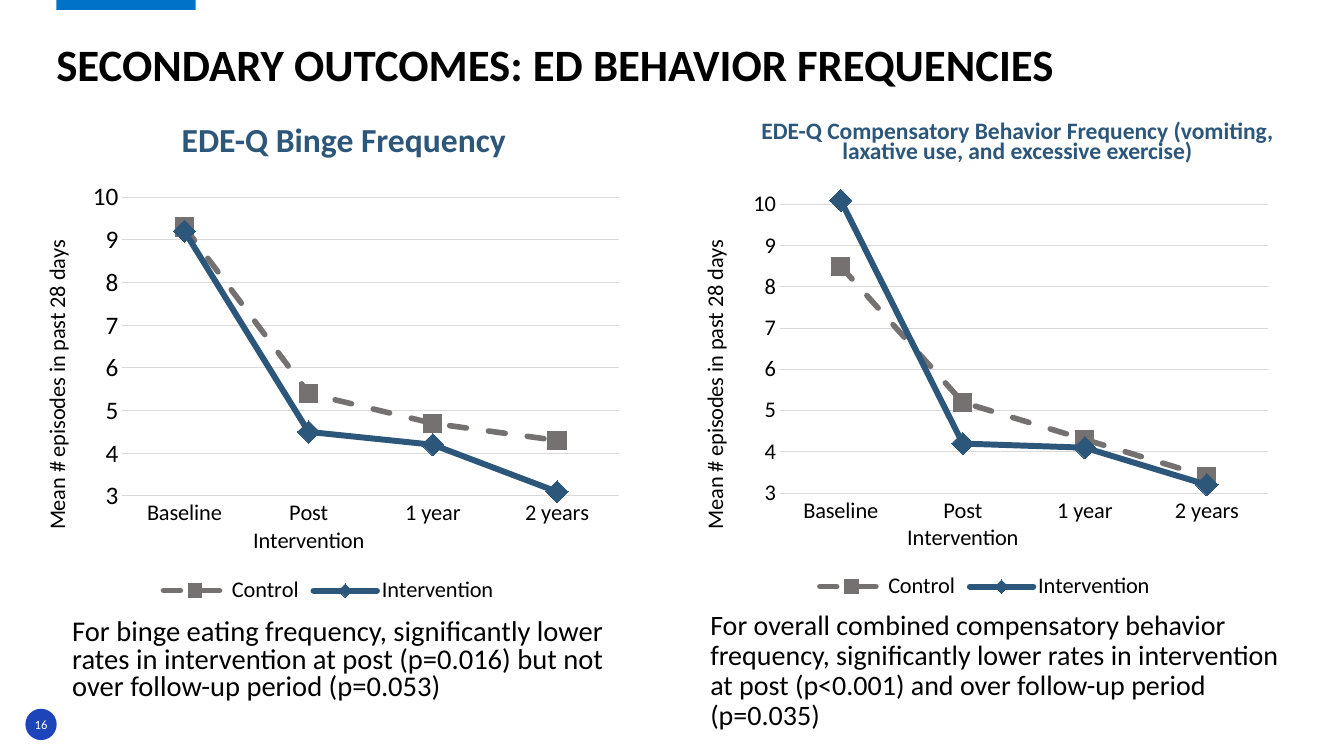
from lxml import etree
from pptx import Presentation
from pptx.chart.data import CategoryChartData
from pptx.dml.color import RGBColor
from pptx.enum.chart import XL_CHART_TYPE, XL_LEGEND_POSITION, XL_MARKER_STYLE, XL_TICK_MARK
from pptx.enum.dml import MSO_LINE
from pptx.enum.shapes import MSO_SHAPE
from pptx.enum.text import MSO_ANCHOR, PP_ALIGN
from pptx.oxml.ns import qn
from pptx.util import Cm, Pt

LINE_MARKERS = XL_CHART_TYPE.LINE_MARKERS
LEGEND_BOTTOM = XL_LEGEND_POSITION.BOTTOM
SQUARE, DIAMOND = XL_MARKER_STYLE.SQUARE, XL_MARKER_STYLE.DIAMOND
NO_TICK = XL_TICK_MARK.NONE
SOLID, DASH = MSO_LINE.SOLID, MSO_LINE.DASH
RECTANGLE, OVAL = MSO_SHAPE.RECTANGLE, MSO_SHAPE.OVAL
TOP, MIDDLE, BOTTOM = MSO_ANCHOR.TOP, MSO_ANCHOR.MIDDLE, MSO_ANCHOR.BOTTOM
LEFT, CENTER = PP_ALIGN.LEFT, PP_ALIGN.CENTER

FONT = "Calibri"
BLACK, WHITE, NAVY, GRAY, PALE = "000000", "FFFFFF", "2C567A", "767171", "D9D9D9"
TAB_BLUE, BADGE_BLUE = "0072C7", "1E44BC"

TITLE = "SECONDARY OUTCOMES: ED BEHAVIOR FREQUENCIES"
PAGE_NUMBER = "16"
AXIS_TITLE = "Mean # episodes in past 28 days"
AXIS_TITLE_CORNER = (0.02, 0.14)
VISITS = ["Baseline", "Post Intervention", "1 year", "2 years"]
GROUP_STYLES = [
    ("Control", GRAY, 4, DASH, SQUARE, 13),
    ("Intervention", NAVY, 4.25, SOLID, DIAMOND, 16),
]
PANELS = [
    {
        "heading": "EDE-Q Binge Frequency",
        "heading_place": (1.5, 2.82, 14.33, 1.32),
        "heading_style": (24, 0.9),
        "chart_place": (0.64, 4.42, 15.27, 10.92),
        "plot_area": (0.16, 0.05, 0.82, 0.69),
        "values": [(9.3, 5.4, 4.7, 4.3), (9.2, 4.5, 4.2, 3.1)],
        "axis_max": 10,
        "axis_size": 18,
        "finding": [
            "For binge eating frequency, significantly lower rates in intervention "
            "at post (p=0.016) but not over follow-up period (p=0.053)",
        ],
        "finding_place": (1.57, 15.49, 14.33, 2.74),
        "finding_style": (20.4, 0.8),
    },
    {
        "heading": "EDE-Q Compensatory Behavior Frequency "
                   "(vomiting, laxative use, and excessive exercise)",
        "heading_place": (18.44, 2.92, 14.4, 1.32),
        "heading_style": (16.8, 0.7),
        "chart_place": (17.22, 4.42, 15.19, 10.82),
        "plot_area": (0.16, 0.02, 0.81, 0.72),
        "values": [(8.5, 5.2, 4.3, 3.4), (10.1, 4.2, 4.1, 3.2)],
        "axis_max": 10.5,
        "axis_size": 16,
        "finding": [
            "For overall combined compensatory behavior frequency, significantly lower "
            "rates in intervention at post (p<0.001) and over follow-up period ",
            "(p=0.035)",
        ],
        "finding_place": (17.65, 15.27, 15.01, 3.05),
        "finding_style": (20, 0.9),
    },
]


def paint(color_format, code):
    color_format.rgb = RGBColor.from_string(code)


def fill_with(fill, code):
    fill.solid()
    paint(fill.fore_color, code)


def style_font(font, size, color=BLACK, bold=False):
    font.name, font.size, font.bold = FONT, Pt(size), bold
    paint(font.color, color)


def style_line(line, color, width):
    fill_with(line.fill, color)
    line.width = Pt(width)


def write(shape, lines, size, spacing, color=BLACK, bold=False, align=LEFT, anchor=TOP, inset=True):
    frame = shape.text_frame
    frame.word_wrap = True
    frame.vertical_anchor = anchor
    if not inset:
        frame.margin_left = frame.margin_right = frame.margin_top = frame.margin_bottom = 0
    para = frame.paragraphs[0]
    para.alignment, para.line_spacing = align, spacing
    for index, line in enumerate(lines):
        if index:
            para.add_line_break()
        span = para.add_run()
        span.text = line
        style_font(span.font, size, color, bold)


def add_text(page, place, *args, **options):
    write(page.shapes.add_textbox(*map(Cm, place)), *args, **options)


def add_block(page, kind, place, color):
    block = page.shapes.add_shape(kind, *map(Cm, place))
    block.shadow.inherit = False
    fill_with(block.fill, color)
    block.line.fill.background()
    return block


def make_layout(settings):
    layout = etree.Element(qn("c:layout"))
    manual = etree.SubElement(layout, qn("c:manualLayout"))
    for tag, value in settings:
        etree.SubElement(manual, qn("c:" + tag)).set("val", str(value))
    return layout


def drop_layout(parent):
    for layout in parent.findall(qn("c:layout")):
        parent.remove(layout)


def place_chart_parts(chart, plot_area):
    plot = chart.element.find(".//" + qn("c:plotArea"))
    drop_layout(plot)
    modes = [("layoutTarget", "inner"), ("xMode", "edge"), ("yMode", "edge")]
    plot.insert(0, make_layout(modes + list(zip("xywh", plot_area))))
    title = plot.find(qn("c:valAx")).find(qn("c:title"))
    drop_layout(title)
    title.find(qn("c:tx")).addnext(make_layout(modes[1:] + list(zip("xy", AXIS_TITLE_CORNER))))
    body = title.find(".//" + qn("a:bodyPr"))
    body.set("rot", "-5400000")
    body.set("vert", "horz")
    for outline in plot.findall(".//" + qn("c:ser") + "/" + qn("c:spPr") + "/" + qn("a:ln")):
        outline.set("cap", "rnd")


def add_frequency_chart(page, panel):
    data = CategoryChartData(number_format="0.0")
    data.categories = VISITS
    for style, values in zip(GROUP_STYLES, panel["values"]):
        data.add_series(style[0], values)
    chart = page.shapes.add_chart(LINE_MARKERS, *map(Cm, panel["chart_place"]), data).chart
    style_font(chart.font, panel["axis_size"])
    chart.has_title = False
    chart.has_legend = True
    chart.legend.position = LEGEND_BOTTOM
    chart.legend.include_in_layout = False
    style_font(chart.legend.font, 16)
    chart.plots[0].vary_by_categories = False

    visits, episodes = chart.category_axis, chart.value_axis
    for axis, size in ((visits, 16), (episodes, panel["axis_size"])):
        axis.major_tick_mark = axis.minor_tick_mark = NO_TICK
        style_font(axis.tick_labels.font, size)
    style_line(visits.format.line, PALE, 0.75)
    episodes.format.line.fill.background()
    episodes.minimum_scale, episodes.maximum_scale = 3, panel["axis_max"]
    episodes.major_unit = 1
    episodes.tick_labels.number_format = "0"
    episodes.tick_labels.number_format_is_linked = False
    style_line(episodes.major_gridlines.format.line, PALE, 0.75)
    span = episodes.axis_title.text_frame.paragraphs[0].add_run()
    span.text = AXIS_TITLE
    style_font(span.font, 16)

    for series, style in zip(chart.plots[0].series, GROUP_STYLES):
        _, color, width, dash, marker, marker_size = style
        series.smooth = False
        style_line(series.format.line, color, width)
        series.format.line.dash_style = dash
        series.marker.style, series.marker.size = marker, marker_size
        fill_with(series.marker.format.fill, color)
        style_line(series.marker.format.line, color, 0.75)
    place_chart_parts(chart, panel["plot_area"])


def main():
    deck = Presentation()
    deck.slide_width, deck.slide_height = Cm(33.87), Cm(19.05)
    page = deck.slides.add_slide(deck.slide_layouts[6])
    add_block(page, RECTANGLE, (1.42, 0, 3.51, 0.25), TAB_BLUE)
    badge = add_block(page, OVAL, (0.64, 17.86, 0.79, 0.79), BADGE_BLUE)
    write(badge, [PAGE_NUMBER], 9, 1, WHITE, align=CENTER, anchor=MIDDLE, inset=False)
    add_text(page, (1.42, -0.28, 30.96, 2.57), [TITLE], 32, 0.9, bold=True, anchor=BOTTOM, inset=False)
    for panel in PANELS:
        add_text(page, panel["heading_place"], [panel["heading"]], *panel["heading_style"],
                 color=NAVY, bold=True, align=CENTER, anchor=BOTTOM)
        add_frequency_chart(page, panel)
        add_text(page, panel["finding_place"], panel["finding"], *panel["finding_style"])
    deck.save("out.pptx")


if __name__ == "__main__":
    main()
